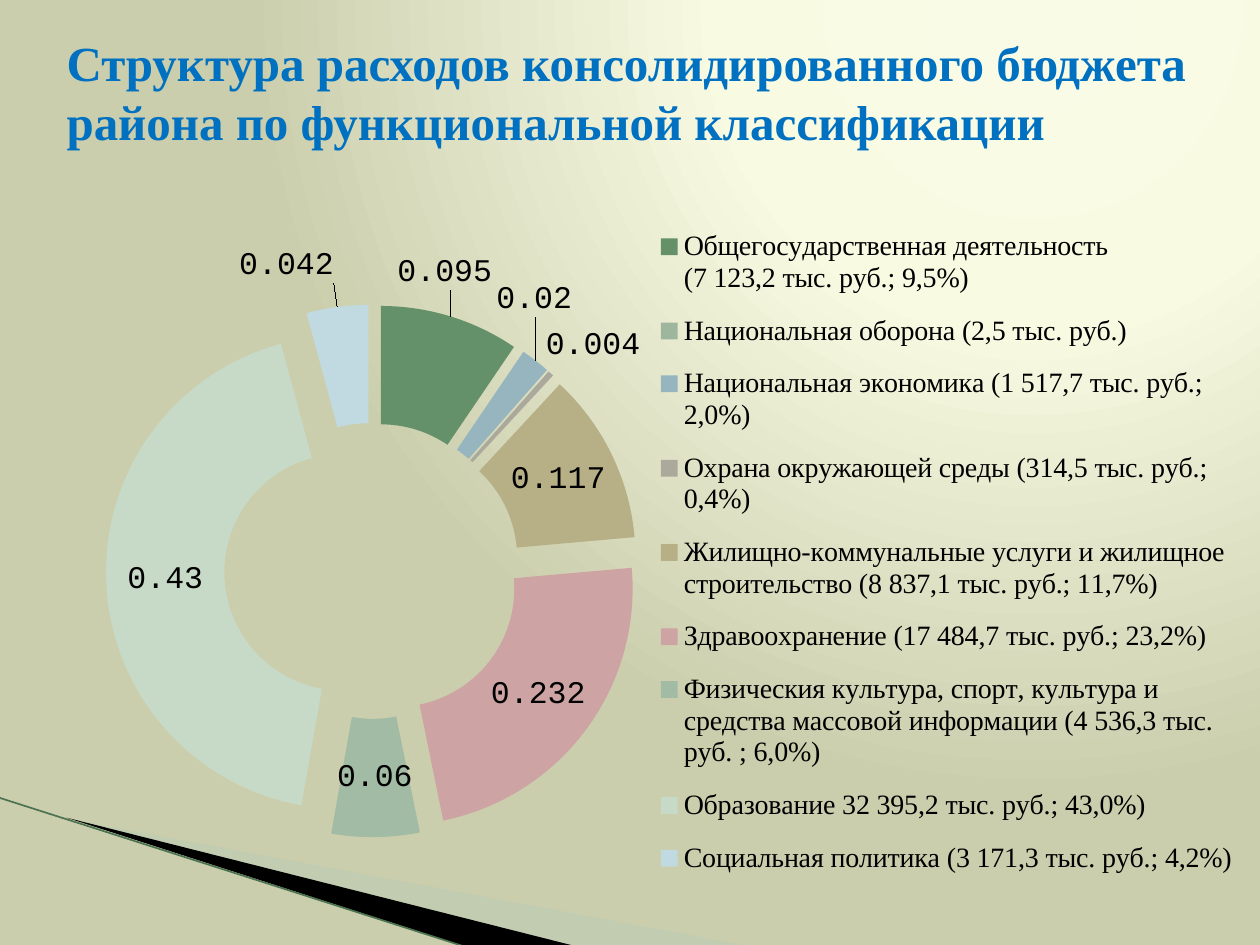
from typing import NamedTuple, Optional

from lxml.etree import SubElement
from pptx import Presentation
from pptx.chart.data import CategoryChartData
from pptx.dml.color import RGBColor
from pptx.enum.chart import XL_CHART_TYPE, XL_LEGEND_POSITION
from pptx.enum.text import MSO_ANCHOR
from pptx.oxml import parse_xml
from pptx.oxml.ns import nsdecls, qn
from pptx.util import Inches, Pt

COLORS = {
    "title": "0070C0", "text": "000000", "band": "B3CBB5",
    "wedge": "000000", "edge": "4B7350",
}
BACKGROUND_STOPS = [(0, "F9FBE7"), (40, "F8FAE2"), (100, "CBCEAD")]
TITLE = ("Структура расходов консолидированного бюджета района "
         "по функциональной классификации")


class Sector(NamedTuple):
    name: str
    share: Optional[float]
    color: str
    label_shift: Optional[tuple[float, float]] = None  # fractions of the chart


class Wedge(NamedTuple):
    points: list[tuple[float, float]]
    color: str
    opacity: int = 100


SECTORS = [
    Sector("Общегосударственная деятельность\n(7 123,2 тыс. руб.; 9,5%)", 0.095, "65916A", (0.01, -0.14)),
    Sector("Национальная оборона (2,5 тыс. руб.)", None, "9DB69D"),
    Sector("Национальная экономика (1 517,7 тыс. руб.; 2,0%)", 0.02, "96B5BF", (0.03, -0.15)),
    Sector("Охрана окружающей среды (314,5 тыс. руб.; 0,4%)", 0.004, "ABA99B", (0.07, -0.1)),
    Sector("Жилищно-коммунальные услуги и жилищное строительство (8 837,1 тыс. руб.; 11,7%)", 0.117, "B7AF86"),
    Sector("Здравоохранение (17 484,7 тыс. руб.; 23,2%)", 0.232, "CEA3A3"),
    Sector("Физическия культура, спорт, культура и средства массовой информации "
           "(4 536,3 тыс. руб. ; 6,0%)", 0.06, "A2BBA4"),
    Sector("Образование 32 395,2 тыс. руб.; 43,0%)", 0.43, "C7D9C7"),
    Sector("Социальная политика (3 171,3 тыс. руб.; 4,2%)", 0.042, "C1D9E0", (-0.05, -0.14)),
]
WEDGES = [
    Wedge([(0.55, 6.5), (5.95, 7.51), (4.56, 7.51)], COLORS["band"], 40),
    Wedge([(0.53, 6.49), (4.57, 7.51), (3.72, 7.52)], COLORS["wedge"]),
]


def rgb(color: str) -> RGBColor:
    return RGBColor.from_string(color)


def style_font(font, name: str, size: float, color: str) -> None:
    font.name = name
    font.size = Pt(size)
    font.color.rgb = rgb(color)


def paint_background(page) -> None:
    """Fill the page with a circular gradient centred near the top right."""
    fill = page.background.fill
    fill.gradient()
    stops = "".join(f'<a:gs pos="{position * 1000}"><a:srgbClr val="{color}"/></a:gs>'
                    for position, color in BACKGROUND_STOPS)
    gradient = parse_xml(
        f'<a:gradFill {nsdecls("a")} rotWithShape="1"><a:gsLst>{stops}</a:gsLst>'
        '<a:path path="circle"><a:fillToRect l="65000" t="0" r="0" b="98000"/></a:path>'
        '</a:gradFill>')
    old = next(page.element.iter(qn("a:gradFill")))
    old.getparent().replace(old, gradient)


def draw_wedge(page, wedge: Wedge) -> None:
    points = [(Inches(x), Inches(y)) for x, y in wedge.points]
    builder = page.shapes.build_freeform(*points[0])
    builder.add_line_segments(points[1:], close=True)
    shape = builder.convert_to_shape()
    shape.shadow.inherit = False
    shape.fill.solid()
    shape.fill.fore_color.rgb = rgb(wedge.color)
    shape.line.fill.background()
    if wedge.opacity < 100:
        color = next(shape.element.spPr.iter(qn("a:srgbClr")))
        SubElement(color, qn("a:alpha"), val=str(wedge.opacity * 1000))


def draw_edge(page) -> None:
    edge = page.shapes.add_connector(1, Inches(-0.01), Inches(6.33), Inches(3.71), Inches(7.52))
    edge.line.color.rgb = rgb(COLORS["edge"])
    edge.line.width = Pt(0.95)
    SubElement(edge.element.spPr, qn("a:effectLst"))


def manual_layout(target: str = "", edge: bool = False, **values: float):
    """Build a c:layout; edge measures from the chart's edge, not as a shift."""
    parts = f'<c:layoutTarget val="{target}"/>' if target else ""
    if edge:
        parts += '<c:xMode val="edge"/><c:yMode val="edge"/>'
    parts += "".join(f'<c:{key} val="{value}"/>' for key, value in values.items())
    return parse_xml(f'<c:layout {nsdecls("c")}><c:manualLayout>{parts}'
                     '</c:manualLayout></c:layout>')


def set_layout(parent, layout, after: Optional[str] = None) -> None:
    for old in parent.findall(qn("c:layout")):
        parent.remove(old)
    if after:
        parent.find(qn(after)).addnext(layout)
    else:
        parent.insert(0, layout)


def style_labels(series) -> None:
    labels = series.data_labels
    labels.show_value = True
    style_font(labels.font, "Courier New", 18, COLORS["text"])
    for index, sector in enumerate(SECTORS):
        if sector.label_shift:
            style_font(series.points[index].data_label.font, "Courier New", 18, COLORS["text"])
    shifts = [sector.label_shift for sector in SECTORS if sector.label_shift]
    for label, (x, y) in zip(series._element.iter(qn("c:dLbl")), shifts):
        set_layout(label, manual_layout(x=x, y=y), after="c:idx")


def draw_chart(page) -> None:
    data = CategoryChartData()
    data.categories = [sector.name for sector in SECTORS]
    data.add_series("Series 1", [sector.share for sector in SECTORS])
    chart = page.shapes.add_chart(XL_CHART_TYPE.DOUGHNUT, Inches(0.59), Inches(1.55),
                                  Inches(9.29), Inches(5.67), data).chart
    chart.has_title = False
    style_font(chart.font, "Courier New", 18, COLORS["text"])
    chart.plots[0].vary_by_categories = True

    series = chart.plots[0].series[0]
    for index, sector in enumerate(SECTORS):
        fill = series.points[index].format.fill
        fill.solid()
        fill.fore_color.rgb = rgb(sector.color)
    explosion = parse_xml(f'<c:explosion {nsdecls("c")} val="25"/>')
    series._element.find(qn("c:dPt")).addprevious(explosion)
    style_labels(series)

    chart.has_legend = True
    legend = chart.legend
    legend.position = XL_LEGEND_POSITION.RIGHT
    legend.include_in_layout = False
    style_font(legend.font, "Times New Roman", 16, COLORS["text"])
    set_layout(legend._element, manual_layout(edge=True, x=0.5, y=0.02, w=0.5, h=0.96),
               after="c:legendPos")
    plot_area = next(chart.element.iter(qn("c:plotArea")))
    set_layout(plot_area, manual_layout("inner", True, x=0.027, y=0.153, w=0.455, h=0.746))


def draw_title(page) -> None:
    box = page.shapes.add_textbox(Inches(0.43), Inches(0.3), Inches(9.29), Inches(0.85))
    frame = box.text_frame
    frame.word_wrap = True
    frame.vertical_anchor = MSO_ANCHOR.MIDDLE
    paragraph = frame.paragraphs[0]
    paragraph.text = TITLE
    style_font(paragraph.font, "Times New Roman", 28, COLORS["title"])
    paragraph.font.bold = True


def main() -> None:
    deck = Presentation()
    deck.slide_width, deck.slide_height = Inches(10), Inches(7.5)
    page = deck.slides.add_slide(deck.slide_layouts[6])
    paint_background(page)
    for wedge in WEDGES:
        draw_wedge(page, wedge)
    draw_edge(page)
    draw_chart(page)
    draw_title(page)
    deck.save("out.pptx")


if __name__ == "__main__":
    main()
